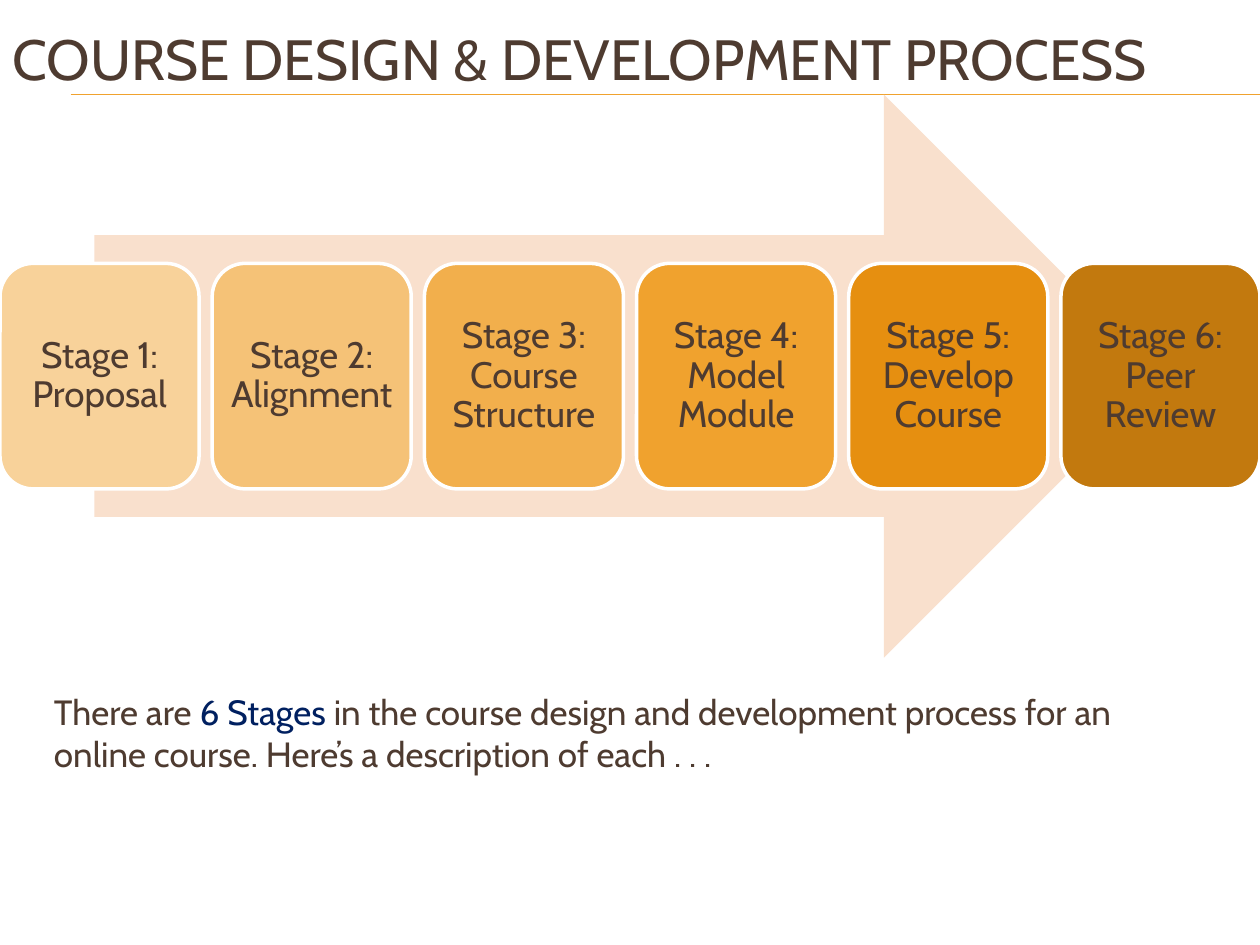
from lxml.etree import SubElement
from pptx import Presentation
from pptx.dml.color import RGBColor
from pptx.enum.shapes import MSO_CONNECTOR, MSO_SHAPE
from pptx.enum.text import MSO_ANCHOR, MSO_AUTO_SIZE, PP_ALIGN
from pptx.oxml.ns import qn
from pptx.util import Inches, Pt

COLOURS = {
    "text": "4E3B30",
    "highlight": "002060",
    "rule": "F0A22E",
    "arrow": "F9E0CD",
    "outline": "FFFFFF",
}

# Stage label lines and box fill
STAGES = [
    (["Stage 1:", "Proposal"], "F8D29A"),
    (["Stage 2:", "Alignment"], "F5C277"),
    (["Stage 3:", "Course", "Structure"], "F2AF4C"),
    (["Stage 4:", "Model", "Module"], "F0A22E"),
    (["Stage 5:", "Develop", "Course"], "E68F10"),
    (["Stage 6:", "Peer Review"], "C2790E"),
]


class SlideBuilder:
    def __init__(self, slide, font):
        self.slide = slide
        self.font = font

    def add_span(self, para, text, size, colour):
        span = para.add_run()
        span.text = text
        span.font.name = self.font
        span.font.size = Pt(size)
        span.font.color.rgb = RGBColor.from_string(colour)

    def title(self, left, top, width, height, text, size):
        box = self.slide.shapes.title
        box.left, box.top = Inches(left), Inches(top)
        box.width, box.height = Inches(width), Inches(height)
        frame = box.text_frame
        frame.word_wrap = True
        frame.auto_size = MSO_AUTO_SIZE.NONE
        frame.vertical_anchor = MSO_ANCHOR.MIDDLE
        para = frame.paragraphs[0]
        para.alignment = PP_ALIGN.LEFT
        self.add_span(para, text, size, COLOURS["text"])

    def rule(self, left, right, y, width):
        line = self.slide.shapes.add_connector(
            MSO_CONNECTOR.STRAIGHT, Inches(left), Inches(y), Inches(right), Inches(y))
        line.line.color.rgb = RGBColor.from_string(COLOURS["rule"])
        line.line.width = Pt(width)
        SubElement(line._element.spPr, qn("a:effectLst"))

    def shape(self, kind, left, top, width, height, fill):
        shape = self.slide.shapes.add_shape(
            kind, Inches(left), Inches(top), Inches(width), Inches(height))
        shape.shadow.inherit = False
        shape.fill.solid()
        shape.fill.fore_color.rgb = RGBColor.from_string(fill)
        shape.line.fill.background()
        return shape

    def stage(self, left, top, width, height, lines, fill):
        box = self.shape(MSO_SHAPE.ROUNDED_RECTANGLE, left, top, width, height, fill)
        box.line.color.rgb = RGBColor.from_string(COLOURS["outline"])
        box.line.width = Pt(2)
        frame = box.text_frame
        frame.word_wrap = True
        frame.vertical_anchor = MSO_ANCHOR.MIDDLE
        frame.margin_left = frame.margin_right = Inches(0.01)
        frame.margin_top = frame.margin_bottom = Inches(0.01)
        para = frame.paragraphs[0]
        para.alignment = PP_ALIGN.CENTER
        para.line_spacing = 0.9
        for index, line in enumerate(lines):
            if index:
                para.add_line_break()
            self.add_span(para, line, 21, COLOURS["text"])

    def text(self, left, top, width, height, spans, size):
        box = self.slide.shapes.add_textbox(
            Inches(left), Inches(top), Inches(width), Inches(height))
        frame = box.text_frame
        frame.word_wrap = True
        frame.auto_size = MSO_AUTO_SIZE.SHAPE_TO_FIT_TEXT
        for text, colour in spans:
            self.add_span(frame.paragraphs[0], text, size, COLOURS[colour])


def main():
    deck = Presentation()
    deck.slide_width, deck.slide_height = Inches(10), Inches(7.5)
    page = SlideBuilder(deck.slides.add_slide(deck.slide_layouts[5]), "Cabin")

    # Heading and rule
    page.rule(0.56, 10, 0.75, 0.75)
    page.title(0, 0, 9.5, 0.92, "COURSE DESIGN & DEVELOPMENT PROCESS", 32.4)

    # Process arrow with evenly spaced stages across the slide
    page.shape(MSO_SHAPE.RIGHT_ARROW, 0.75, 0.75, 8.5, 4.47, COLOURS["arrow"])
    stage_width = 1.58
    step = (10 - stage_width) / (len(STAGES) - 1)
    for index, (lines, fill) in enumerate(STAGES):
        page.stage(index * step, 2.09, stage_width, 1.79, lines, fill)

    # Explanation
    page.text(0.33, 5.43, 9.25, 0.77, [
        ("There are ", "text"),
        ("6 Stages ", "highlight"),
        ("in the course design and development process for an online course. "
         "Here’s a description of each . . .", "text"),
    ], 20)

    deck.save("out.pptx")


if __name__ == "__main__":
    main()
